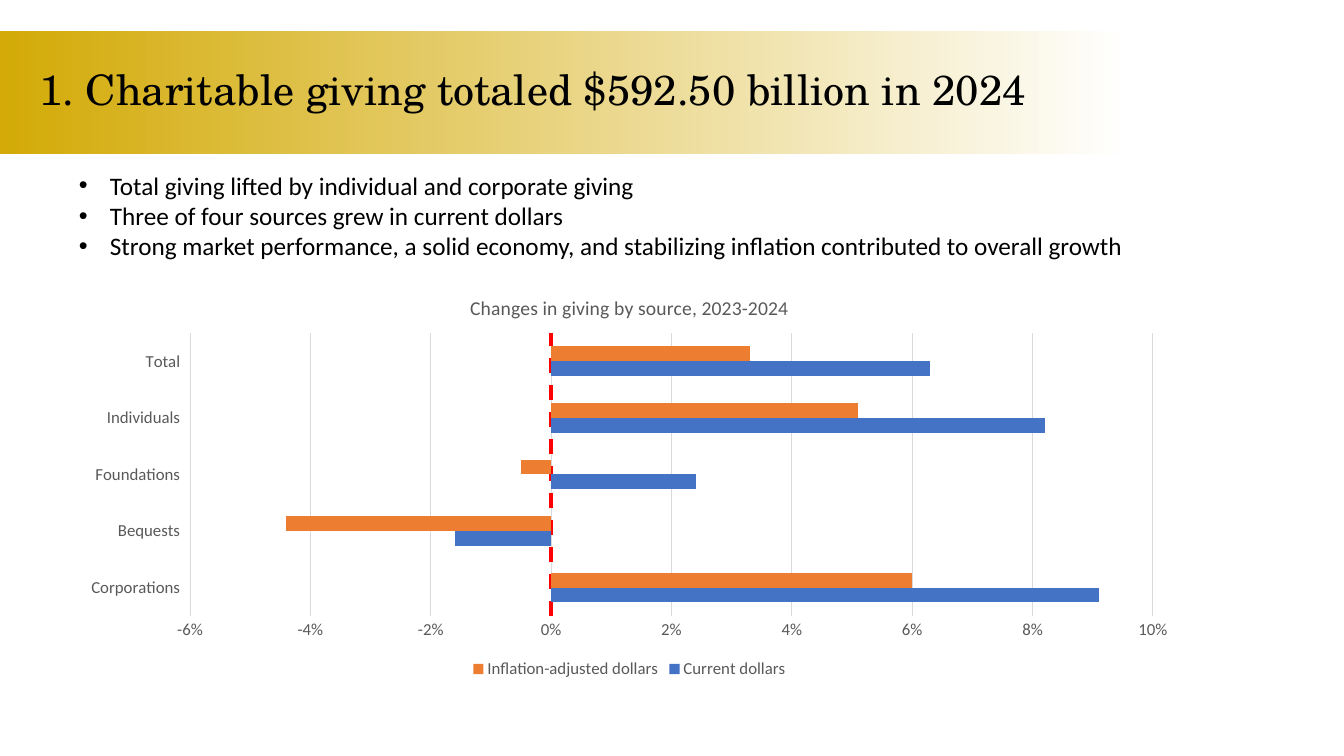
from lxml.etree import SubElement
from pptx import Presentation
from pptx.chart.data import CategoryChartData as ChartData
from pptx.dml.color import RGBColor
from pptx.enum.chart import XL_CHART_TYPE as ChartType
from pptx.enum.chart import XL_LEGEND_POSITION as LegendPosition
from pptx.enum.chart import XL_TICK_LABEL_POSITION as LabelPosition
from pptx.enum.chart import XL_TICK_MARK as TickMark
from pptx.enum.dml import MSO_LINE as Dash
from pptx.enum.shapes import MSO_SHAPE as Shape
from pptx.enum.text import MSO_ANCHOR as Anchor
from pptx.enum.text import MSO_AUTO_SIZE as AutoSize
from pptx.oxml import parse_xml
from pptx.oxml.ns import nsdecls, qn
from pptx.util import Emu, Pt

PX_PER_INCH = 100.8


def px(*lengths):
    """Turn pixel lengths into EMU."""
    return [Emu(round(length * 914400 / PX_PER_INCH)) for length in lengths]


def colour(value):
    """Turn a hex string into a colour."""
    return RGBColor.from_string(value)


def assign(target, values):
    """Set attributes of an object from a dict."""
    for name, value in values.items():
        setattr(target, name, value)


class SlideBuilder:
    """Holds the style and the current slide."""

    body_font = "Calibri"
    title_font = "TeX Gyre Schola"
    black, grey, grid = "000000", "595959", "D9D9D9"

    def __init__(self, deck):
        """Add a blank slide to the deck."""
        self.page = deck.slides.add_slide(deck.slide_layouts[6])

    def style(self, font, size, ink, name=body_font):
        """Set size, colour and typeface of a font."""
        assign(font, {"size": Pt(size), "name": name, "bold": False})
        font.color.rgb = colour(ink)

    def band(self, place, stops):
        """Draw a rectangle that fades from left to right."""
        box = self.page.shapes.add_shape(Shape.RECTANGLE, *px(*place))
        box.shadow.inherit = False
        box.line.fill.background()
        box.fill.gradient()
        box.fill.gradient_angle = 0
        for stop, (position, shade) in zip(box.fill.gradient_stops, stops):
            stop.position = position
            stop.color.rgb = colour(shade)

    def text(self, place, lines, size, name=body_font, frame=None, spacing=1.0, hang=0):
        """Write paragraphs, bulleted when they have a hanging indent."""
        box = self.page.shapes.add_textbox(*px(*place))
        assign(box.text_frame, {"word_wrap": True, **(frame or {})})
        for index, line in enumerate(lines):
            paras = box.text_frame
            para = paras.add_paragraph() if index else paras.paragraphs[0]
            para.line_spacing = spacing
            if hang:
                props = para._p.get_or_add_pPr()
                indent = px(hang)[0]
                props.set("marL", str(indent))
                props.set("indent", str(-indent))
                SubElement(props, qn("a:buFont"), typeface="Arial")
                SubElement(props, qn("a:buChar"), char="•")
            span = para.add_run()
            span.text = line
            self.style(span.font, size, self.black, name)

    def bar_chart(self, place, plot_place, title, categories, series):
        """Add a clustered bar chart of percentages."""
        data = ChartData(number_format="0%")
        data.categories = categories
        for name, _, values in series:
            data.add_series(name, values)
        chart = self.page.shapes.add_chart(ChartType.BAR_CLUSTERED, *px(*place), data).chart
        self.style(chart.font, 10, self.black)
        assign(chart, {"has_title": True, "has_legend": True})
        heading = chart.chart_title
        heading.include_in_layout = False
        heading.text_frame.text = title
        self.style(heading.text_frame.paragraphs[0].runs[0].font, 14, self.grey)
        assign(chart.legend, {"position": LegendPosition.BOTTOM, "include_in_layout": False})
        self.style(chart.legend.font, 12, self.grey)

        plot = chart.plots[0]
        assign(plot, {"gap_width": 182, "overlap": 0, "vary_by_categories": False})
        for bars, (_, shade, _) in zip(plot.series, series):
            bars.invert_if_negative = False
            bars.format.fill.solid()
            bars.format.fill.fore_color.rgb = colour(shade)

        for axis in (chart.category_axis, chart.value_axis):
            assign(axis, {"major_tick_mark": TickMark.NONE, "minor_tick_mark": TickMark.NONE})
            self.style(axis.tick_labels.font, 12, self.grey)
        zero = chart.category_axis
        zero.tick_label_position = LabelPosition.LOW
        zero.format.line.color.rgb = colour("FF0000")
        assign(zero.format.line, {"width": Pt(2.75), "dash_style": Dash.DASH})
        scale = chart.value_axis
        assign(scale, {"minimum_scale": -0.06, "maximum_scale": 0.1, "major_unit": 0.02,
                       "has_major_gridlines": True})
        assign(scale.tick_labels, {"number_format": "0%", "number_format_is_linked": False})
        scale.format.line.fill.background()
        scale.major_gridlines.format.line.color.rgb = colour(self.grid)
        scale.major_gridlines.format.line.width = Pt(0.75)
        self.place_plot(chart, place, plot_place)

    def place_plot(self, chart, place, plot_place):
        """Fix the inner plot area within the chart."""
        left, top, width, height = place
        x, y, w, h = plot_place
        shares = {"x": (x - left) / width, "y": (y - top) / height,
                  "w": w / width, "h": h / height}
        modes = {"layoutTarget": "inner", "xMode": "edge", "yMode": "edge"}
        settings = {**modes, **{key: f"{share:.3f}" for key, share in shares.items()}}
        layout = parse_xml(f"<c:layout {nsdecls('c')}/>")
        manual = SubElement(layout, qn("c:manualLayout"))
        for key, value in settings.items():
            SubElement(manual, qn(f"c:{key}"), val=value)
        area = chart._chartSpace.chart.plotArea
        for old in area.findall(qn("c:layout")):
            area.remove(old)
        area.insert(0, layout)


def main():
    """Build the charitable giving slide."""
    deck = Presentation()
    deck.slide_width, deck.slide_height = px(1344, 756)
    slide = SlideBuilder(deck)
    slide.band((0, 31, 1153, 123), [(0, "D3AA07"), (0.98, "FFFFFF")])
    slide.text((30, 48, 1159, 87), ["1. Charitable giving totaled $592.50 billion in 2024"],
               30, slide.title_font, {"vertical_anchor": Anchor.MIDDLE}, spacing=0.9)
    slide.text((69, 165, 1091, 102), [
        "Total giving lifted by individual and corporate giving",
        "Three of four sources grew in current dollars",
        "Strong market performance, a solid economy, and stabilizing inflation "
        "contributed to overall growth",
    ], 18, frame={"auto_size": AutoSize.SHAPE_TO_FIT_TEXT}, hang=31)
    slide.bar_chart(
        (69, 277, 1121, 406), (190, 333, 963, 283),
        "Changes in giving by source, 2023-2024",
        ["Corporations", "Bequests", "Foundations", "Individuals", "Total"],
        [("Current dollars", "4472C4", [0.091, -0.016, 0.024, 0.082, 0.063]),
         ("Inflation-adjusted dollars", "ED7D31", [0.06, -0.044, -0.005, 0.051, 0.033])])
    deck.save("out.pptx")


if __name__ == "__main__":
    main()
